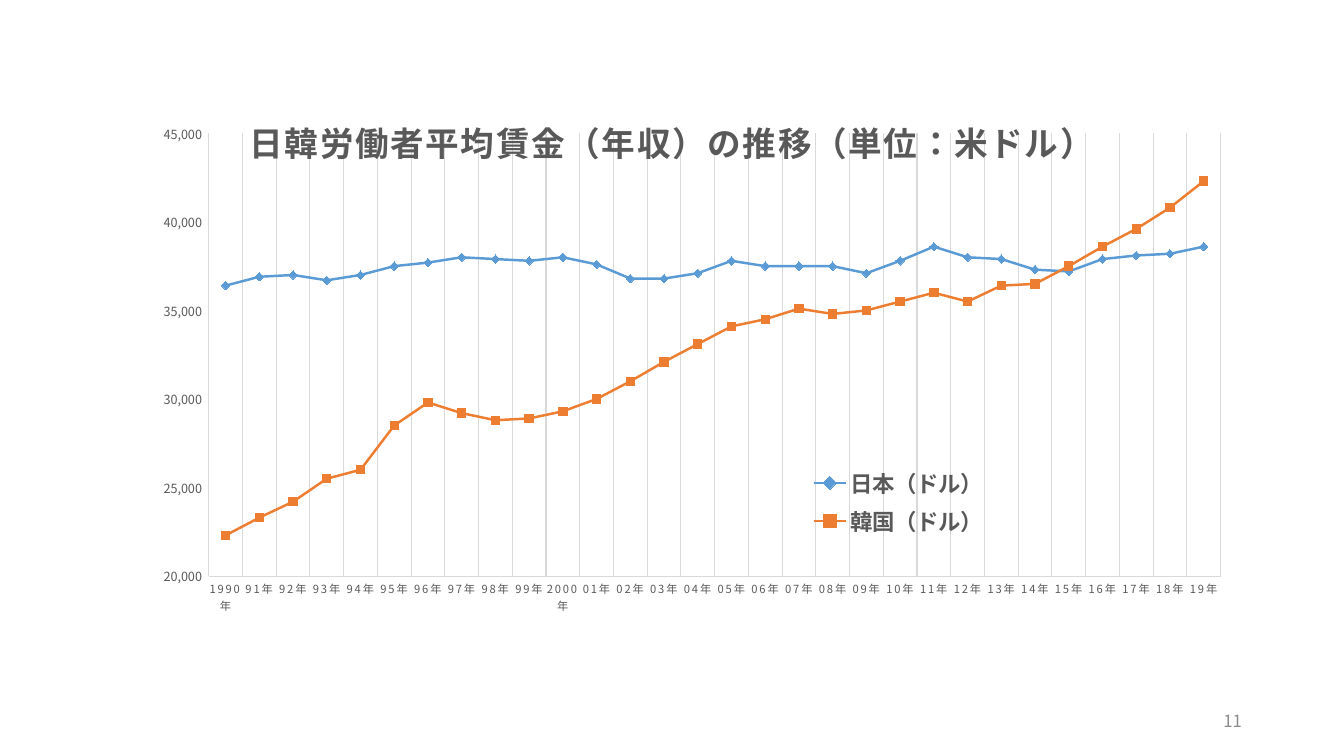
from lxml import etree
from pptx import Presentation
from pptx.chart.data import CategoryChartData
from pptx.dml.color import RGBColor
from pptx.enum.chart import XL_CHART_TYPE, XL_LEGEND_POSITION, XL_MARKER_STYLE, XL_TICK_MARK
from pptx.enum.text import MSO_ANCHOR, PP_ALIGN
from pptx.oxml.ns import qn
from pptx.util import Cm, Pt

LINE_MARKERS = XL_CHART_TYPE.LINE_MARKERS
LEGEND_TOP = XL_LEGEND_POSITION.TOP
DIAMOND = XL_MARKER_STYLE.DIAMOND
SQUARE = XL_MARKER_STYLE.SQUARE
NO_TICK = XL_TICK_MARK.NONE
MIDDLE = MSO_ANCHOR.MIDDLE
RIGHT = PP_ALIGN.RIGHT

FONT = "Noto Sans CJK JP"
GREY = "595959"
PALE = "D9D9D9"
SPACING = "120"


def style(font, size, color, bold=False):
    font.name = FONT
    font.size = Pt(size)
    font.bold = bold
    font.color.rgb = RGBColor.from_string(color)
    etree.SubElement(font._element, qn("a:ea")).set("typeface", FONT)


def arrange(element, index, **settings):
    for old in element.findall(qn("c:layout")):
        element.remove(old)
    layout = etree.Element(qn("c:layout"))
    manual = etree.SubElement(layout, qn("c:manualLayout"))
    for name, value in settings.items():
        etree.SubElement(manual, qn("c:" + name)).set("val", str(value))
    element.insert(index, layout)


deck = Presentation()
deck.slide_width = Cm(33.87)
deck.slide_height = Cm(19.05)
page = deck.slides.add_slide(deck.slide_layouts[6])

years = [f"{year}年" if year in (1990, 2000) else f"{year % 100:02d}年" for year in range(1990, 2020)]
japan = [
    36400, 36900, 37000, 36700, 37000, 37500, 37700, 38000, 37900, 37800,
    38000, 37600, 36800, 36800, 37100, 37800, 37500, 37500, 37500, 37100,
    37800, 38600, 38000, 37900, 37300, 37200, 37900, 38100, 38200, 38600,
]
korea = [
    22300, 23300, 24200, 25500, 26000, 28500, 29800, 29200, 28800, 28900,
    29300, 30000, 31000, 32100, 33100, 34100, 34500, 35100, 34800, 35000,
    35500, 36000, 35500, 36400, 36500, 37500, 38600, 39600, 40800, 42300,
]
wages = CategoryChartData()
wages.categories = years
wages.add_series("日本（ドル）", japan)
wages.add_series("韓国（ドル）", korea)

chart = page.shapes.add_chart(LINE_MARKERS, Cm(2.34), Cm(2.11), Cm(29.21), Cm(15.06), wages).chart
style(chart.font, 10, "000000")
plot = chart.plots[0]
plot.vary_by_categories = False
arrange(chart._chartSpace.chart.plotArea, 0, layoutTarget="inner", xMode="edge", yMode="edge",
        x=0.1, y=0.083, w=0.873, h=0.741)

for series, color, marker in zip(plot.series, ("5B9BD5", "ED7D31"), (DIAMOND, SQUARE)):
    series.smooth = False
    series.format.line.width = Pt(1.75)
    series.marker.style = marker
    series.marker.size = 6
    series.marker.format.fill.solid()
    series.marker.format.fill.fore_color.rgb = RGBColor.from_string(color)
    for line in (series.format.line, series.marker.format.line):
        line.color.rgb = RGBColor.from_string(color)

years_axis = chart.category_axis
wage_axis = chart.value_axis
years_axis.has_major_gridlines = True
wage_axis.has_major_gridlines = False
wage_axis.minimum_scale = 20000
wage_axis.maximum_scale = 45000
wage_axis.major_unit = 5000
wage_axis.tick_labels.number_format = "#,##0_ ;\\-#,##0\\ "
wage_axis.tick_labels.number_format_is_linked = False
for axis, size in ((years_axis, 8), (wage_axis, 9)):
    axis.major_tick_mark = NO_TICK
    axis.minor_tick_mark = NO_TICK
    style(axis.tick_labels.font, size, GREY)
for line in (years_axis.format.line, wage_axis.format.line, years_axis.major_gridlines.format.line):
    line.color.rgb = RGBColor.from_string(PALE)
    line.width = Pt(0.75)
years_axis.tick_labels.font._element.set("spc", SPACING)

chart.has_title = True
title = chart.chart_title
span = title.text_frame.paragraphs[0].add_run()
span.text = "日韓労働者平均賃金（年収）の推移（単位：米ドル）"
style(span.font, 24, GREY, True)
span.font._element.set("spc", SPACING)
title.include_in_layout = True
arrange(title._element, 1, xMode="edge", yMode="edge", x=0.13, y=0.04)

chart.has_legend = True
legend = chart.legend
legend.position = LEGEND_TOP
legend.include_in_layout = True
style(legend.font, 16, GREY, True)
arrange(legend._element, 1, xMode="edge", yMode="edge", x=0.62, y=0.63, w=0.15, h=0.14)

box = page.shapes.add_textbox(Cm(23.93), Cm(17.65), Cm(7.62), Cm(1.02))
box.text_frame.word_wrap = True
box.text_frame.vertical_anchor = MIDDLE
para = box.text_frame.paragraphs[0]
para.alignment = RIGHT
span = para.add_run()
span.text = "11"
style(span.font, 12, "8C8C8C")

deck.save("out.pptx")
